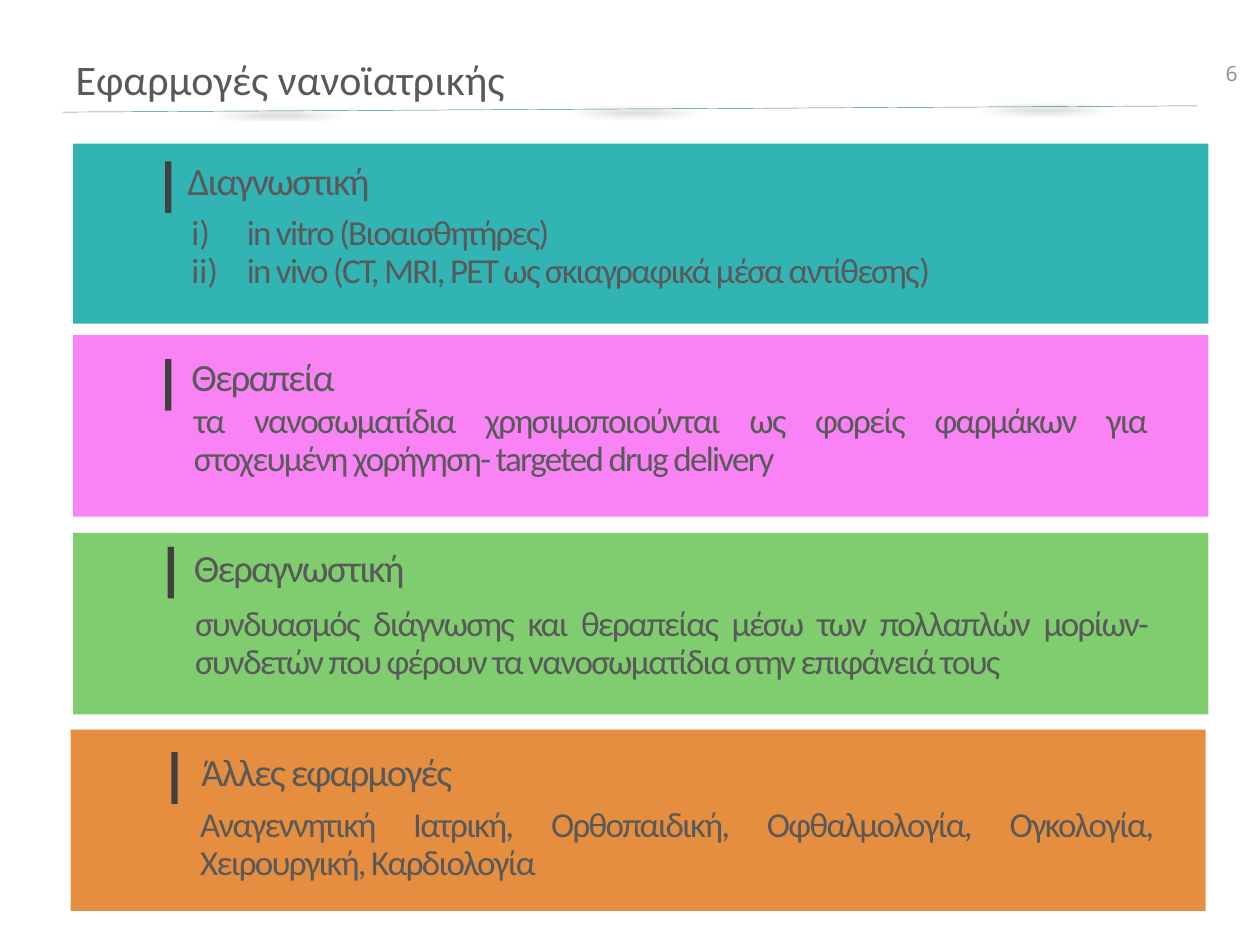
"""Build the slide on applications of nanomedicine."""
from dataclasses import dataclass

from lxml import etree
from pptx import Presentation
from pptx.dml.color import RGBColor
from pptx.enum import shapes, text
from pptx.oxml import ns
from pptx.util import Inches, Pt

COLORS = {
    "teal": "00A2A2", "pink": "F976F5", "green": "72C860", "orange": "E4822B",
    "text": "595959", "marker": "404040", "rule": "31859C",
    "number": "8C8C8C", "shadow": "000000",
}
TIGHT = -100
Point = tuple[float, float]


@dataclass(frozen=True)
class Panel:
    color: str
    opacity: int
    corner: Point
    height: float
    marker: Point
    heading_at: Point
    heading: str
    body_at: Point
    items: tuple[tuple[str, ...], ...]
    numbered: bool = False


PANELS = (
    Panel("teal", 80, (0.58, 1.14), 1.43, (1.31, 1.28), (1.39, 1.2), "Διαγνωστική", (1.42, 1.66),
          (("in vitro (Βιοαισθητήρες)",),
           ("in vivo (CT, MRI, PET ως σκιαγραφικά μέσα αντίθεσης", ")")), numbered=True),
    Panel("pink", 90, (0.58, 2.66), 1.44, (1.31, 2.85), (1.42, 2.75), "Θεραπεία", (1.44, 3.15),
          (("τα νανοσωματίδια χρησιμοποιούνται ως φορείς φαρμάκων για "
            "στοχευμένη χορήγηση- targeted drug delivery",),)),
    Panel("green", 90, (0.58, 4.23), 1.44, (1.33, 4.34), (1.44, 4.27), "Θεραγνωστική", (1.45, 4.76),
          (("συνδυασμός διάγνωσης και θεραπείας μέσω των πολλαπλών μορίων-συνδετών "
            "που φέρουν τα νανοσωματίδια στην επιφάνειά τους",),)),
    Panel("orange", 90, (0.56, 5.79), 1.44, (1.36, 5.97), (1.5, 5.89), "Άλλες εφαρμογές", (1.49, 6.36),
          (("Αναγεννητική Ιατρική, Ορθοπαιδική, Οφθαλμολογία, Ογκολογία, "
            "Χειρουργική, Καρδιολογία",),)),
)


def add_element(parent, tag: str, **attributes):
    """Append a DrawingML element to its parent."""
    values = {key: str(value) for key, value in attributes.items()}
    return etree.SubElement(parent, ns.qn(f"a:{tag}"), values)


def set_font(para, size: float, color: str = "text", name: str = "Calibri") -> None:
    """Set the font of a whole paragraph."""
    para.font.size = Pt(size)
    para.font.name = name
    para.font.color.rgb = RGBColor.from_string(COLORS[color])


def add_block(parent, corner: Point, size: Point, color: str, opacity: int = 100) -> None:
    """Draw a plain filled rectangle."""
    block = parent.shapes.add_shape(
        shapes.MSO_SHAPE.RECTANGLE, *map(Inches, corner + size))
    block.shadow.inherit = False
    block.line.fill.background()
    block.fill.solid()
    block.fill.fore_color.rgb = RGBColor.from_string(COLORS[color])
    if opacity < 100:
        fill = block._element.spPr.find(ns.qn("a:solidFill"))
        add_element(fill[0], "alpha", val=opacity * 1000)


def add_box(parent, corner: Point, size: Point):
    """Add a wrapping text box and return its text frame."""
    frame = parent.shapes.add_textbox(*map(Inches, corner + size)).text_frame
    frame.word_wrap = True
    return frame


def add_span(para, words: str, spacing: int) -> None:
    """Add a run with the given letter spacing."""
    span = para.add_run()
    span.text = words
    span._r.get_or_add_rPr().set("spc", str(spacing))


def add_panel(slide, panel: Panel) -> None:
    """Draw one coloured panel with its marker, heading and body."""
    group = slide.shapes.add_group_shape()
    add_block(group, panel.corner, (9.01, panel.height), panel.color, panel.opacity)
    add_block(group, panel.marker, (0.05, 0.41), "marker")

    heading = add_box(group, panel.heading_at, (7.11, 0.47))
    heading.auto_size = text.MSO_AUTO_SIZE.SHAPE_TO_FIT_TEXT
    add_span(heading.paragraphs[0], panel.heading, TIGHT)
    set_font(heading.paragraphs[0], 22)

    body = add_box(group, panel.body_at, (7.75, 0.71))
    body.auto_size = text.MSO_AUTO_SIZE.SHAPE_TO_FIT_TEXT
    for index, spans in enumerate(panel.items):
        para = body.add_paragraph() if index else body.paragraphs[0]
        para.line_spacing = 0.9
        if panel.numbered:
            properties = para._p.get_or_add_pPr()
            properties.set("marL", str(Inches(0.44)))
            properties.set("indent", str(Inches(-0.44)))
            add_element(properties, "buAutoNum", type="romanLcParenR")
        else:
            para.alignment = text.PP_ALIGN.JUSTIFY
        for position, words in enumerate(spans):
            add_span(para, words, 0 if position else TIGHT)
        set_font(para, 20)


def add_title(slide) -> None:
    """Place the title and the shadowed rule under it."""
    title = slide.shapes.title
    title.left, title.top, title.width, title.height = map(Inches, (0.5, 0, 9, 1.25))
    title.text_frame.text = "Εφαρμογές νανοϊατρικής"
    title.text_frame.vertical_anchor = text.MSO_ANCHOR.MIDDLE
    para = title.text_frame.paragraphs[0]
    para.alignment = text.PP_ALIGN.LEFT
    set_font(para, 24)

    rule = slide.shapes.add_connector(
        shapes.MSO_CONNECTOR.STRAIGHT, *map(Inches, (0.5, 0.89, 9.5, 0.84)))
    rule.line.width = Pt(0.25)
    rule.line.color.rgb = RGBColor.from_string(COLORS["rule"])
    effects = add_element(rule._element.spPr, "effectLst")
    shadow = add_element(effects, "outerShdw", blurRad=Pt(3.1), dist=Pt(1.6),
                         dir=90 * 60000, rotWithShape=0)
    add_element(add_element(shadow, "srgbClr", val=COLORS["shadow"]), "alpha", val=38000)


def add_page_number(slide) -> None:
    """Write the page number at the top right."""
    frame = add_box(slide, (9.47, 0.38), (0.45, 0.4))
    frame.vertical_anchor = text.MSO_ANCHOR.MIDDLE
    frame.text = "6"
    para = frame.paragraphs[0]
    para.alignment = text.PP_ALIGN.RIGHT
    set_font(para, 12, "number", "Open Sans")


def main() -> None:
    """Build and save the deck."""
    deck = Presentation()
    deck.slide_width, deck.slide_height = Inches(10), Inches(7.5)
    slide = deck.slides.add_slide(deck.slide_layouts.get_by_name("Title Only"))
    add_title(slide)
    for panel in PANELS:
        add_panel(slide, panel)
    add_page_number(slide)
    deck.save("out.pptx")


if __name__ == "__main__":
    main()
